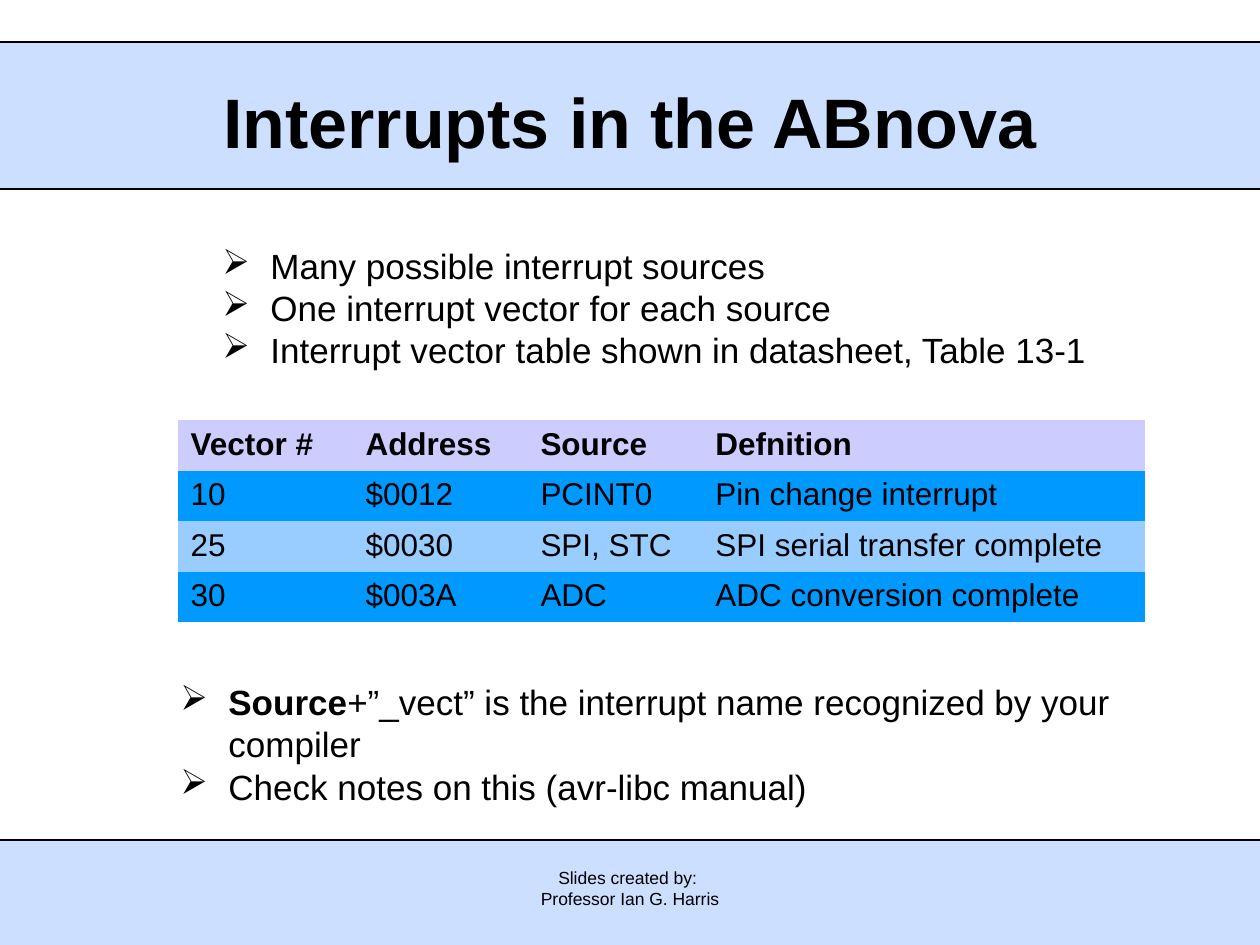
from lxml.etree import SubElement
from pptx import Presentation
from pptx.dml.color import RGBColor
from pptx.enum.shapes import MSO_CONNECTOR, MSO_SHAPE
from pptx.enum.text import MSO_ANCHOR, PP_ALIGN
from pptx.oxml.ns import qn
from pptx.util import Emu, Pt

FONT = "Arial"
BLACK = "000000"
BAND = "CDDFFF"
BULLET_INDENT = 48
VECTORS = [
    ("Vector #", "Address", "Source", "Defnition"),
    ("10", "$0012", "PCINT0", "Pin change interrupt"),
    ("25", "$0030", "SPI, STC", "SPI serial transfer complete"),
    ("30", "$003A", "ADC", "ADC conversion complete"),
]
ROW_FILLS = ["CCCCFF", "0099FF", "99CCFF", "0099FF"]
COLUMN_WIDTHS = [175, 175, 175, 442]
ROW_HEIGHT = 50


def px(length):
    return Emu(round(length * 914400 / 126))


def color(hex_value):
    return RGBColor.from_string(hex_value)


def add_run(paragraph, text, size, bold=False):
    run = paragraph.add_run()
    run.text = text
    run.font.name = FONT
    run.font.size = Pt(size)
    run.font.bold = bold
    run.font.color.rgb = color(BLACK)


def add_band(slide, box):
    band = slide.shapes.add_shape(MSO_SHAPE.RECTANGLE, *map(px, box))
    band.shadow.inherit = False
    band.fill.solid()
    band.fill.fore_color.rgb = color(BAND)
    band.line.color.rgb = color(BAND)
    band.line.width = Pt(0.75)


def add_rule(slide, left, top, width):
    rule = slide.shapes.add_connector(
        MSO_CONNECTOR.STRAIGHT, px(left), px(top), px(left + width), px(top)
    )
    rule.line.color.rgb = color(BLACK)
    rule.line.width = Pt(0.75)
    SubElement(rule._element.spPr, qn("a:effectLst"))


def add_text(slide, box, lines, size, align=PP_ALIGN.LEFT, anchor=MSO_ANCHOR.TOP,
             bullet=None, inset_top=6, wrap=True):
    frame = slide.shapes.add_textbox(*map(px, box)).text_frame
    frame.word_wrap = wrap
    frame.vertical_anchor = anchor
    frame.margin_top = px(inset_top)
    for index, runs in enumerate(lines):
        paragraph = frame.add_paragraph() if index else frame.paragraphs[0]
        paragraph.alignment = align
        if bullet:
            add_bullet(paragraph, bullet)
        for text, bold in runs:
            add_run(paragraph, text, size, bold)


def add_bullet(paragraph, character):
    properties = paragraph._p.get_or_add_pPr()
    properties.set("marL", str(px(BULLET_INDENT)))
    properties.set("indent", str(-px(BULLET_INDENT)))
    bullet_color = SubElement(properties, qn("a:buClr"))
    SubElement(bullet_color, qn("a:srgbClr"), val=BLACK)
    SubElement(properties, qn("a:buChar"), char=character)


def add_header(slide, left, top, width, height):
    add_band(slide, (left, top, width, height))
    add_rule(slide, left, top, width)
    add_rule(slide, left, top + height, width)
    add_text(slide, (left + 95, top, width - 190, height + 10),
             [[("Interrupts in the ABnova", True)]], 40,
             PP_ALIGN.CENTER, MSO_ANCHOR.MIDDLE)


def add_footer(slide, left, top, width, height):
    add_band(slide, (left, top, width, height))
    add_rule(slide, left, top, width)
    add_text(slide, (left + 431, top + 21, width - 862, 62),
             [[("Slides created by: ", False)], [("Professor Ian G. Harris", False)]],
             10, PP_ALIGN.CENTER)


def add_bullets(slide, box, lines, wrap=True):
    add_text(slide, box, lines, 20, bullet="➢", inset_top=9, wrap=wrap)


def add_cell_borders(cell):
    properties = cell._tc.get_or_add_tcPr()
    for side in ("lnL", "lnR", "lnT", "lnB"):
        border = SubElement(properties, qn(f"a:{side}"), w=str(Pt(0.03)))
        fill = SubElement(border, qn("a:solidFill"))
        SubElement(fill, qn("a:srgbClr"), val="FFFFFF")


def add_vector_table(slide, left, top):
    table = slide.shapes.add_table(
        len(VECTORS), len(COLUMN_WIDTHS), px(left), px(top),
        px(sum(COLUMN_WIDTHS)), px(ROW_HEIGHT * len(VECTORS))
    ).table
    for column, width in zip(table.columns, COLUMN_WIDTHS):
        column.width = px(width)
    for row_index, (values, fill) in enumerate(zip(VECTORS, ROW_FILLS)):
        table.rows[row_index].height = px(ROW_HEIGHT)
        for column_index, value in enumerate(values):
            cell = table.cell(row_index, column_index)
            add_cell_borders(cell)
            cell.fill.solid()
            cell.fill.fore_color.rgb = color(fill)
            cell.margin_top = px(9)
            paragraph = cell.text_frame.paragraphs[0]
            paragraph.line_spacing = 0.93
            add_run(paragraph, value, 18, bold=row_index == 0)


def main():
    presentation = Presentation()
    presentation.slide_width = px(1260)
    presentation.slide_height = px(945)
    slide = presentation.slides.add_slide(presentation.slide_layouts[6])
    add_footer(slide, 0, 840, 1260, 105)
    add_header(slide, 0, 42, 1260, 147)
    add_vector_table(slide, 178, 420)
    add_bullets(slide, (210, 236, 903, 152), [
        [("Many possible interrupt sources", False)],
        [("One interrupt vector for each source", False)],
        [("Interrupt vector table shown in datasheet, Table 13-1", False)],
    ], wrap=False)
    add_bullets(slide, (168, 672, 998, 152), [
        [("Source", True),
         ("+”_vect” is the interrupt name recognized by your compiler", False)],
        [("Check notes on this (avr-libc manual)", False)],
    ])
    presentation.save("out.pptx")


if __name__ == "__main__":
    main()
